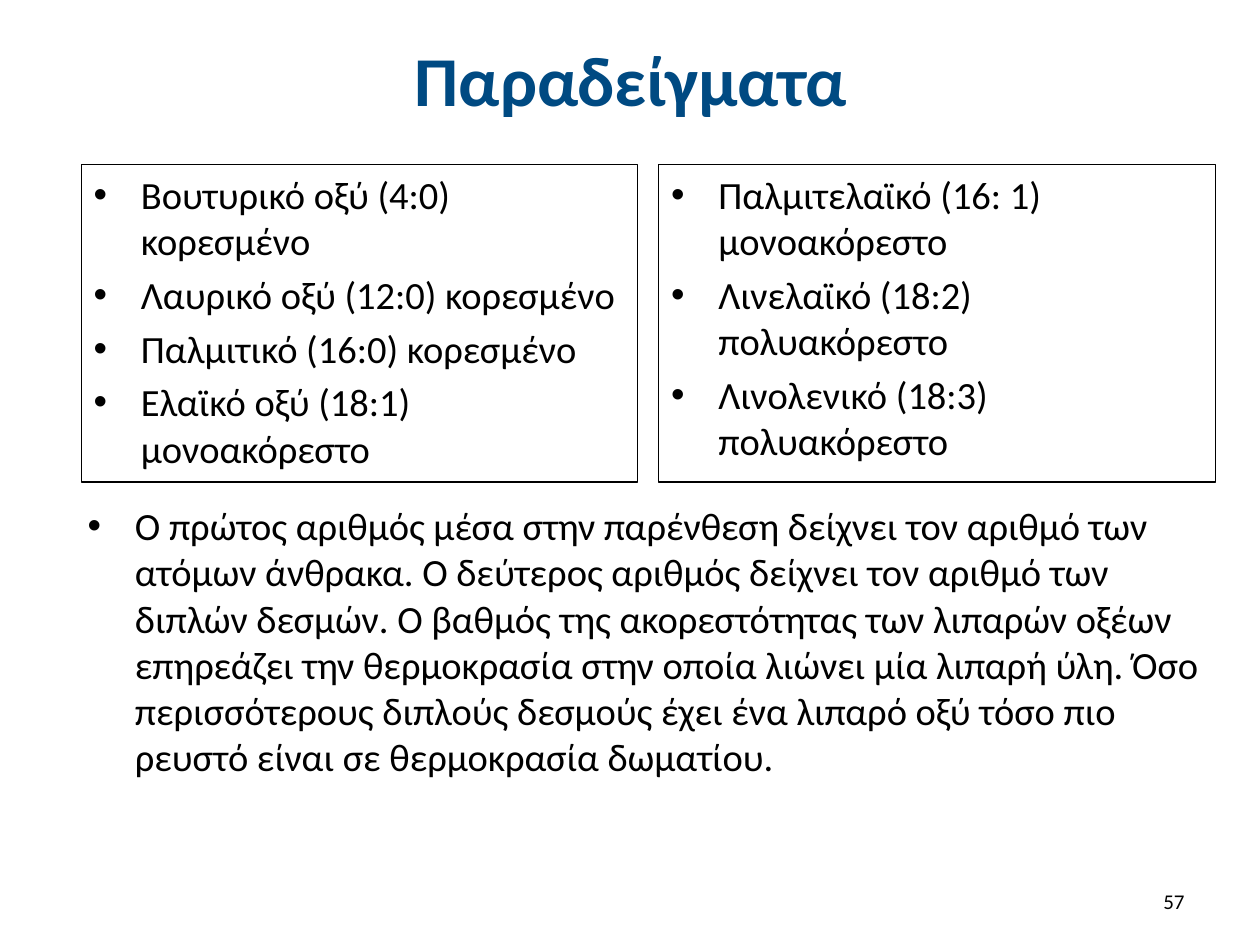
import pptx
import pptx.dml.color
import pptx.enum.shapes
import pptx.enum.text
import pptx.oxml
import pptx.util
from dataclasses import dataclass

Pt = pptx.util.Pt
Align = pptx.enum.text.PP_ALIGN
Anchor = pptx.enum.text.MSO_ANCHOR


@dataclass
class Theme:
    font: str = "Calibri"
    title_color: str = "004A82"
    ink: str = "000000"
    title_size: float = 40
    body_size: float = 22
    number_size: float = 12
    line_width: float = 0.75
    indent: float = 27
    space_before: float = 4.4


class SlideWriter:
    def __init__(self, page, theme):
        self.page = page
        self.theme = theme

    def color(self, value):
        return pptx.dml.color.RGBColor.from_string(value)

    def style(self, para, size, color, align, bold=False):
        para.alignment = align
        for span in para.runs:
            span.font.name = self.theme.font
            span.font.size = Pt(size)
            span.font.bold = bold
            span.font.color.rgb = self.color(color)

    def label(self, text, area, size, color, align, bold=False):
        """One line of text, centred vertically."""
        box = self.page.shapes.add_textbox(*map(Pt, area))
        frame = box.text_frame
        frame.word_wrap = True
        frame.vertical_anchor = Anchor.MIDDLE
        frame.text = text
        self.style(frame.paragraphs[0], size, color, align, bold)

    def add_bullet(self, para):
        props = para._p.get_or_add_pPr()
        props.set("marL", str(Pt(self.theme.indent)))
        props.set("indent", str(-Pt(self.theme.indent)))
        for tag, name, value in (("buFont", "typeface", "Arial"),
                                 ("buChar", "char", "•")):
            mark = pptx.oxml.xmlchemy.OxmlElement(f"a:{tag}")
            mark.set(name, value)
            props.append(mark)

    def fill_bullets(self, box, items):
        frame = box.text_frame
        frame.word_wrap = True
        frame.vertical_anchor = Anchor.TOP
        frame.text = "\n".join(items)
        for para in frame.paragraphs:
            self.style(para, self.theme.body_size, self.theme.ink, Align.LEFT)
            para.space_before = Pt(self.theme.space_before)
            self.add_bullet(para)

    def bullets(self, items, area):
        box = self.page.shapes.add_textbox(*map(Pt, area))
        self.fill_bullets(box, items)
        box.text_frame.auto_size = pptx.enum.text.MSO_AUTO_SIZE.SHAPE_TO_FIT_TEXT

    def framed_bullets(self, items, area):
        kind = pptx.enum.shapes.MSO_SHAPE.RECTANGLE
        box = self.page.shapes.add_shape(kind, *map(Pt, area))
        box.shadow.inherit = False
        box.fill.background()
        box.line.color.rgb = self.color(self.theme.ink)
        box.line.width = Pt(self.theme.line_width)
        self.fill_bullets(box, items)


def main():
    deck = pptx.Presentation()
    deck.slide_width, deck.slide_height = Pt(720), Pt(540)
    theme = Theme()
    writer = SlideWriter(deck.slides.add_slide(deck.slide_layouts[6]), theme)

    # Title
    writer.label("Παραδείγματα", (36.5, 9.5, 648, 71), theme.title_size,
                 theme.title_color, Align.CENTER, bold=True)

    # Two framed columns of fatty acids
    columns = [
        ["Βουτυρικό οξύ (4:0) κορεσμένο",
         "Λαυρικό οξύ (12:0) κορεσμένο",
         "Παλμιτικό (16:0) κορεσμένο",
         "Ελαϊκό οξύ (18:1) μονοακόρεστο"],
        ["Παλμιτελαϊκό (16: 1) μονοακόρεστο",
         "Λινελαϊκό (18:2) πολυακόρεστο",
         "Λινολενικό (18:3) πολυακόρεστο"],
    ]
    left, top, width, height, gap = 46.5, 94, 318, 181.5, 12
    for index, acids in enumerate(columns):
        writer.framed_bullets(
            acids, (left + index * (width + gap), top, width, height))

    # Explanation
    writer.bullets([
        "Ο πρώτος αριθμός μέσα στην παρένθεση δείχνει τον αριθμό των ατόμων "
        "άνθρακα. Ο δεύτερος αριθμός δείχνει τον αριθμό των διπλών δεσμών. "
        "Ο βαθμός της ακορεστότητας των λιπαρών οξέων επηρεάζει την "
        "θερμοκρασία στην οποία λιώνει μία λιπαρή ύλη. Όσο περισσότερους "
        "διπλούς δεσμούς έχει ένα λιπαρό οξύ τόσο πιο ρευστό είναι σε "
        "θερμοκρασία δωματίου."], (43, 283.5, 657.5, 199.5))

    # Page number
    writer.label("57", (516, 500.5, 168, 28.5), theme.number_size,
                 theme.ink, Align.RIGHT)

    deck.save("out.pptx")


if __name__ == "__main__":
    main()
